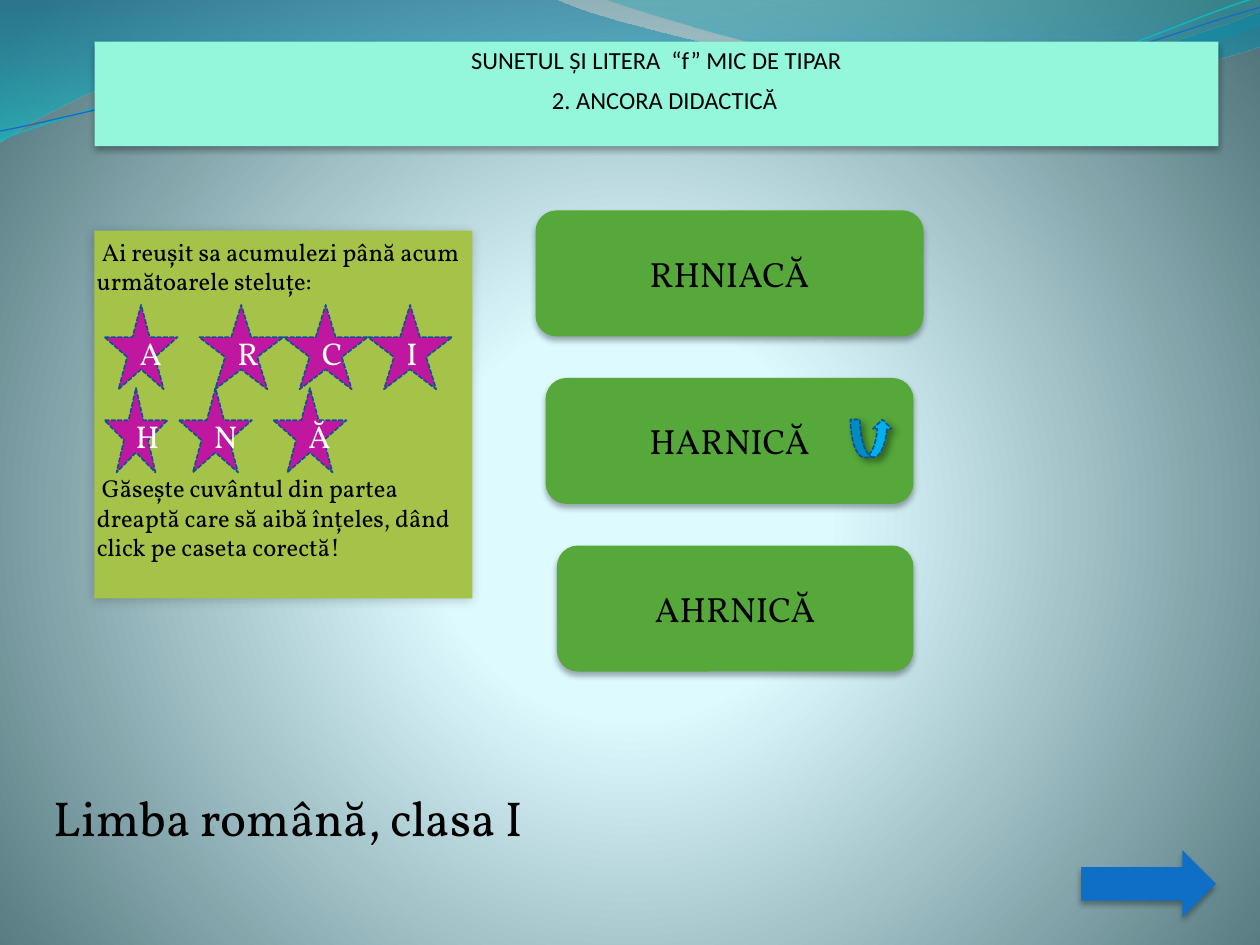
from dataclasses import dataclass
from lxml import etree
from pptx import Presentation
from pptx.dml.color import RGBColor
from pptx.enum.dml import MSO_LINE
from pptx.enum.lang import MSO_LANGUAGE_ID as LANG
from pptx.enum.shapes import MSO_SHAPE as SHAPE
from pptx.enum.text import MSO_ANCHOR as ANCHOR, PP_ALIGN as ALIGN
from pptx.oxml import parse_xml
from pptx.oxml.ns import nsdecls, qn
from pptx.util import Inches, Pt


@dataclass(frozen=True)
class Theme:
    black: str = "000000"
    white: str = "FFFFFF"
    banner: str = "94F7DC"
    panel: str = "A5C249"
    star: str = "BF179F"
    button: str = "55A839"
    blue: str = "0F6FC6"
    cyan: str = "0AB8BF"
    mark: str = "00B0F0"
    dash: str = "0B5292"
    sans: str = "Calibri"
    serif: str = "Vollkorn"
    body: int = 14
    letter: int = 18
    word: int = 20
    footer: int = 28


T = Theme()
SOFT = (32, 3.5, 2.2, 90)


def set_gradient(fill, root, stops, direction):
    fill.gradient()
    old = root.find(".//" + qn("a:gradFill"))
    gs = "".join(
        f'<a:gs pos="{pos * 1000}"><a:srgbClr val="{color}">'
        f'<a:alpha val="{alpha * 1000}"/></a:srgbClr></a:gs>'
        for pos, color, alpha in stops)
    old.getparent().replace(old, parse_xml(
        f'<a:gradFill {nsdecls("a")} rotWithShape="1"><a:gsLst>{gs}</a:gsLst>{direction}</a:gradFill>'))


def add_box(kind, at, color, shadow=None, dashed=False):
    sp = s.shapes.add_shape(kind, *map(Inches, at))
    sp.shadow.inherit = False
    sp.fill.solid()
    sp.fill.fore_color.rgb = RGBColor.from_string(color)
    if dashed:
        sp.line.color.rgb = RGBColor.from_string(T.dash)
        sp.line.width = Pt(0.9)
        sp.line.dash_style = MSO_LINE.SQUARE_DOT
    else:
        sp.line.fill.background()
    if shadow:
        alpha, blur, dist, angle = shadow
        sp._element.spPr.find(qn("a:effectLst")).append(parse_xml(
            f'<a:outerShdw {nsdecls("a")} blurRad="{Pt(blur)}" dist="{Pt(dist)}" '
            f'dir="{angle * 60000}" algn="ctr" rotWithShape="0"><a:srgbClr val="{T.black}">'
            f'<a:alpha val="{alpha * 1000}"/></a:srgbClr></a:outerShdw>'))
    return sp


prs = Presentation()
prs.slide_width, prs.slide_height = Inches(10), Inches(7.5)
s = prs.slides.add_slide(prs.slide_layouts[6])

set_gradient(
    s.background.fill, s.element,
    [(0, "DEFBFF", 100), (25, "DDFAFF", 100), (100, "52767C", 100)],
    '<a:path path="circle"><a:fillToRect l="10000" t="110000" r="10000" b="100000"/></a:path>')

waves = [
    ((0, 0),
     [[(4.4, -0.01)], [(4.76, 0.17), (6.64, 0.63), (7.58, 0.63)],
      [(8.53, 0.63), (9.58, 0.26), (10, 0.09)], [(10.01, 0.36)],
      [(9.83, 0.44), (8.7, 0.76), (7.46, 0.75)], [(6.22, 0.75), (3.82, 0.28), (2.57, 0.34)],
      [(1.29, 0.36), (0.46, 0.83), (-0.01, 1.13)]],
     [(0, "0074A1", 45), (100, "00C6CF", 55)], None),
    ((4.79, -0.01),
     [[(5.09, 0.11), (6.82, 0.62), (7.69, 0.65)], [(8.56, 0.69), (9.61, 0.32), (10, 0.21)],
      [(10, 0)]],
     [(0, "00A1A9", 30), (80, "008BBF", 45)], None),
    ((0, 1.11),
     [[(0.48, 0.93), (1.58, 0.57), (2.77, 0.52)], [(3.95, 0.47), (5.93, 0.89), (7.13, 0.8)],
      [(8.33, 0.71), (9.38, 0.15), (9.98, -0.02)]],
     None, (T.cyan, 0.85)),
    ((0, 1.04),
     [[(0.47, 0.96), (1.64, 0.61), (2.83, 0.56)], [(4.03, 0.51), (5.97, 0.84), (7.17, 0.75)],
      [(8.36, 0.67), (9.41, 0.21), (10, 0.06)]],
     None, (T.blue, 0.75)),
]
for start, segments, stops, stroke in waves:
    builder = s.shapes.build_freeform(*map(Inches, start))
    builder.add_line_segments(
        [(Inches(x), Inches(y)) for segment in segments for x, y in segment],
        close=stops is not None)
    sp = builder.convert_to_shape()
    steps = iter(sp._element.findall(".//" + qn("a:lnTo")))
    for segment in segments:
        group = [next(steps) for _ in segment]
        if len(group) == 3:
            curve = etree.Element(qn("a:cubicBezTo"))
            group[0].addprevious(curve)
            for step in group:
                curve.append(step[0])
                step.getparent().remove(step)
    sp.shadow.inherit = False
    if stops:
        set_gradient(sp.fill, sp._element, stops, '<a:lin ang="5400000" scaled="0"/>')
        sp.line.fill.background()
    else:
        sp.fill.background()
        sp.line.color.rgb = RGBColor.from_string(stroke[0])
        sp.line.width = Pt(stroke[1])

title = add_box(SHAPE.RECTANGLE, (0.75, 0.33, 8.92, 0.83), T.banner, SOFT)
panel = add_box(SHAPE.RECTANGLE, (0.75, 1.83, 3, 2.92), T.panel, (20, 6, 1, 135))
footer = s.shapes.add_textbox(*map(Inches, (0.33, 6.25, 4.92, 0.83)))
texts = [
    (title, (0, 0.03, 0), T.sans, T.body, ALIGN.CENTER, 6,
     ["SUNETUL ŞI LITERA  “f” MIC DE TIPAR", "2. ANCORA DIDACTICĂ"]),
    (panel, (0.02, 0.05, 0.02), T.serif, T.body, ALIGN.LEFT, 101.5,
     [" Ai reuşit sa acumulezi până acum următoarele steluţe:",
      " Găseşte cuvântul din partea dreaptă care să aibă înţeles, dând click pe caseta corectă!"]),
    (footer, (0.1, 0, 0.1), T.serif, T.footer, ALIGN.LEFT, 0, ["Limba română, clasa I"]),
]
for sp, insets, font, size, align, gap, lines in texts:
    tf = sp.text_frame
    tf.word_wrap = True
    tf.vertical_anchor = ANCHOR.TOP
    tf.margin_left, tf.margin_top, tf.margin_right = map(Inches, insets)
    tf.text = "\n".join(lines)
    for i, p in enumerate(tf.paragraphs):
        p.alignment = align
        p.space_before = Pt(gap if i else 0)
        p.font.name, p.font.size = font, Pt(size)
        p.font.color.rgb = RGBColor.from_string(T.black)
        p.runs[0].font.language_id = LANG.ROMANIAN
title.text_frame.paragraphs[1]._p.get_or_add_pPr().set("marL", str(Inches(0.13)))

stars = [
    ("A", 0.83, 2.42, 0.58), ("C", 2.25, 2.42, 0.67), ("N", 1.42, 3.08, 0.58),
    ("H", 0.83, 3.08, 0.5), ("Ă", 2.17, 3.08, 0.58), ("R", 1.58, 2.42, 0.67),
    ("I", 2.92, 2.42, 0.67),
]
words = [("RHNIACĂ", 4.25, 1.67, 3.08), ("HARNICĂ", 4.33, 3, 2.92), ("AHRNICĂ", 4.42, 4.33, 2.83)]
labelled = [
    (add_box(SHAPE.STAR_5_POINT, (x, y, w, 0.67), T.star, dashed=True), text, T.letter, T.white)
    for text, x, y, w in stars
] + [
    (add_box(SHAPE.ROUNDED_RECTANGLE, (x, y, w, 1), T.button, SOFT), text, T.word, T.black)
    for text, x, y, w in words
]
for sp, text, size, color in labelled:
    sp.text_frame.text = text
    p = sp.text_frame.paragraphs[0]
    p.alignment = ALIGN.CENTER
    p.font.name, p.font.size = T.serif, Pt(size)
    p.font.color.rgb = RGBColor.from_string(color)

add_box(SHAPE.RIGHT_ARROW, (8.58, 6.75, 1.07, 0.53), T.blue, SOFT)
add_box(SHAPE.CURVED_UP_ARROW, (6.75, 3.33, 0.33, 0.3), T.mark, (40, 4, 3, 45), dashed=True)

prs.save("out.pptx")
